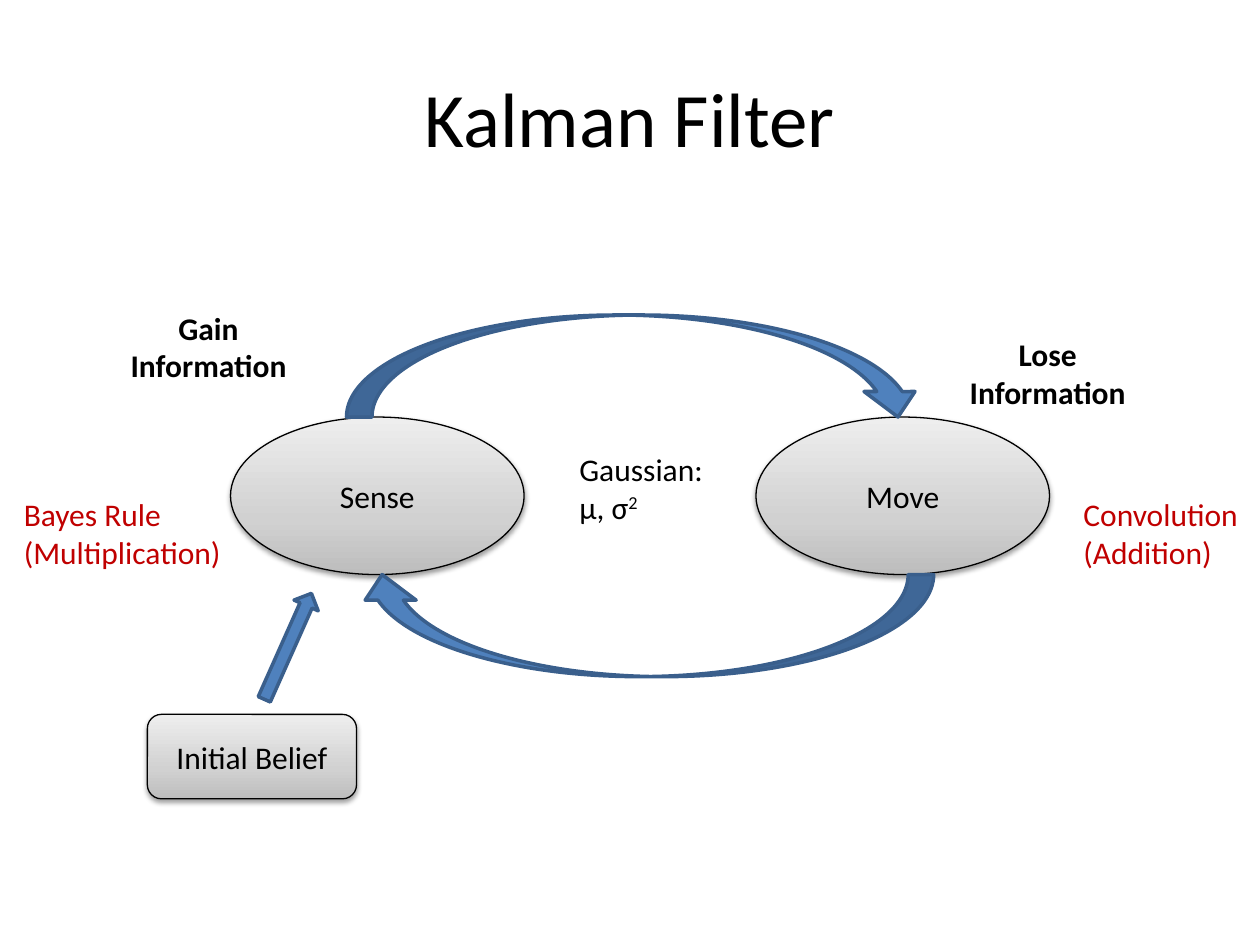
import copy

import lxml.etree
import pptx
import pptx.dml.color
import pptx.enum.dml
import pptx.enum.shapes
import pptx.enum.text
import pptx.oxml
import pptx.oxml.ns
import pptx.util

Inches = pptx.util.Inches
Pt = pptx.util.Pt
RGBColor = pptx.dml.color.RGBColor
Shape = pptx.enum.shapes.MSO_SHAPE
Align = pptx.enum.text.PP_ALIGN
Anchor = pptx.enum.text.MSO_ANCHOR


class Theme:
    font = "Calibri"
    title_size = 44
    body_size = 18
    text = "000000"
    accent = "C00000"
    arrow_fill = "4F81BD"
    arrow_line = "3A5F8C"
    arrow_line_width = 2
    node_line_width = 0.75
    node_gradient = [(0, "BDBDBD"), (0.35, "D1D1D1"), (1, "EEEEEE")]


TITLE = ("Kalman Filter", (0.5, 0.3, 9, 1.25))

# text, preset, box (left, top, width, height)
NODES = [
    ("Sense", Shape.OVAL, (1.83, 3.31, 2.33, 1.25)),
    ("Move", Shape.OVAL, (6, 3.31, 2.33, 1.25)),
    ("Initial Belief", Shape.ROUNDED_RECTANGLE, (1.17, 5.67, 1.66, 0.67)),
]

# preset, box, rotation in degrees
ARROWS = [
    (Shape.CURVED_DOWN_ARROW, (2.75, 2.5, 4.58, 0.81), 0),
    (Shape.CURVED_DOWN_ARROW, (2.83, 4.56, 4.58, 0.81), 180),
    (Shape.UP_ARROW, (2.18, 4.67, 0.21, 0.92), 24),
]

# text, box, formatting
LABELS = [
    ("Gain Information", (0.75, 2.4, 1.81, 0.71), {"align": Align.CENTER, "bold": True}),
    ("Lose\nInformation", (7.41, 2.61, 1.81, 0.71), {"align": Align.CENTER, "bold": True}),
    ("Bayes Rule\n(Multiplication)", (0.09, 3.88, 2.19, 0.71), {"color": Theme.accent}),
    ("Convolution\n(Addition)", (8.5, 3.88, 1.75, 0.71), {"color": Theme.accent}),
]
DISTRIBUTION = ("Gaussian:\nμ, σ", "2", (4.5, 3.52, 1.19, 0.71))

NODE_SHADOW = (
    f'<a:effectLst {pptx.oxml.ns.nsdecls("a")}>'
    '<a:outerShdw blurRad="39370" dist="20320" dir="5400000" rotWithShape="0">'
    '<a:srgbClr val="000000"><a:alpha val="38000"/></a:srgbClr>'
    "</a:outerShdw></a:effectLst>"
)


def rgb(value):
    return RGBColor.from_string(value)


def write_text(shape, text, size=Theme.body_size, color=Theme.text,
               align=Align.LEFT, anchor=Anchor.TOP, bold=False, wrap=True):
    frame = shape.text_frame
    frame.word_wrap = wrap
    frame.vertical_anchor = anchor
    frame.text = text
    for paragraph in frame.paragraphs:
        paragraph.alignment = align
        for run in paragraph.runs:
            format_run(run, size, color, bold)


def format_run(run, size=Theme.body_size, color=Theme.text, bold=False):
    run.font.name = Theme.font
    run.font.size = Pt(size)
    run.font.bold = bold
    run.font.color.rgb = rgb(color)


def add_label(slide, text, box, **formatting):
    label = slide.shapes.add_textbox(*map(Inches, box))
    write_text(label, text, **formatting)
    return label


def add_outlined_shape(slide, preset, box, line_color, line_width):
    shape = slide.shapes.add_shape(preset, *map(Inches, box))
    shape.shadow.inherit = False
    shape.line.color.rgb = rgb(line_color)
    shape.line.width = Pt(line_width)
    return shape


def fill_with_gradient(shape):
    """Run the theme's gradient from the bottom of the shape to its top."""
    fill = shape.fill
    fill.gradient()
    fill.gradient_angle = 90
    stop_list = shape.element.spPr.find(".//" + pptx.oxml.ns.qn("a:gsLst"))
    stop_list.append(copy.deepcopy(stop_list[-1]))
    for stop, (position, color) in zip(fill.gradient_stops, Theme.node_gradient):
        stop.position = position
        stop.color.rgb = rgb(color)


def add_node(slide, text, preset, box):
    node = add_outlined_shape(slide, preset, box, Theme.text, Theme.node_line_width)
    fill_with_gradient(node)
    properties = node.element.spPr
    properties.replace(properties.find(pptx.oxml.ns.qn("a:effectLst")),
                       pptx.oxml.parse_xml(NODE_SHADOW))
    write_text(node, text, align=Align.CENTER, anchor=Anchor.MIDDLE)


def add_arrow(slide, preset, box, rotation):
    arrow = add_outlined_shape(slide, preset, box, Theme.arrow_line, Theme.arrow_line_width)
    arrow.fill.solid()
    arrow.fill.fore_color.rgb = rgb(Theme.arrow_fill)
    arrow.rotation = rotation


def add_distribution(slide, text, exponent, box):
    label = add_label(slide, text, box, wrap=False)
    run = label.text_frame.paragraphs[-1].add_run()
    run.text = exponent
    format_run(run)
    run.font._element.set("baseline", "30000")


def main():
    presentation = pptx.Presentation()
    presentation.slide_width = Inches(10)
    presentation.slide_height = Inches(7.5)
    slide = presentation.slides.add_slide(presentation.slide_layouts[6])

    add_label(slide, *TITLE, size=Theme.title_size, align=Align.CENTER, anchor=Anchor.MIDDLE)
    for node in NODES:
        add_node(slide, *node)
    for arrow in ARROWS:
        add_arrow(slide, *arrow)
    for text, box, formatting in LABELS:
        add_label(slide, text, box, **formatting)
    add_distribution(slide, *DISTRIBUTION)

    presentation.save("out.pptx")


if __name__ == "__main__":
    main()
